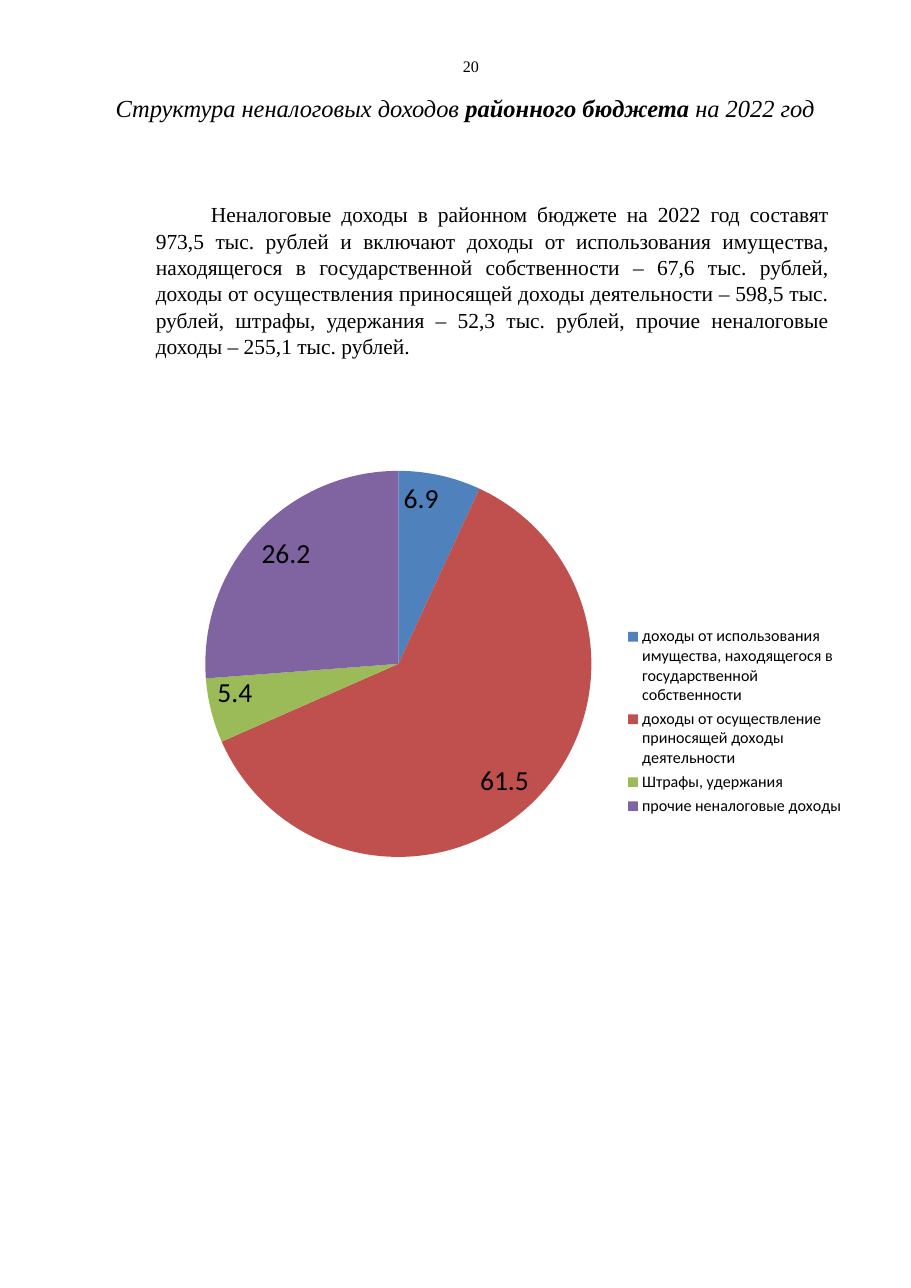
from lxml.etree import SubElement
from pptx import Presentation
from pptx.chart.data import CategoryChartData
from pptx.dml.color import RGBColor
from pptx.enum.chart import XL_CHART_TYPE as ChartType
from pptx.enum.chart import XL_LABEL_POSITION as LabelPosition
from pptx.enum.chart import XL_LEGEND_POSITION as LegendPosition
from pptx.enum.text import MSO_ANCHOR as Anchor
from pptx.enum.text import MSO_AUTO_SIZE as AutoSize
from pptx.enum.text import PP_ALIGN as Align
from pptx.oxml.ns import qn
from pptx.util import Pt

EMU_PER_PX = 8298
SERIF = "Times New Roman"
BLACK = "000000"

TITLE_PARTS = [
    ("Структура неналоговых доходов ", False),
    ("районного бюджета ", True),
    ("на 2022 год", False),
]
SUMMARY = (
    "Неналоговые доходы в районном бюджете на 2022 год составят 973,5 тыс. рублей "
    "и включают доходы от использования имущества, находящегося в государственной "
    "собственности – 67,6 тыс. рублей, доходы от осуществления приносящей доходы "
    "деятельности – 598,5 тыс. рублей, штрафы, удержания – 52,3 тыс. рублей, "
    "прочие неналоговые доходы – 255,1 тыс. рублей."
)
INCOME_SHARES = [
    ("доходы от использования имущества, находящегося в государственной собственности",
     6.9, "4F81BD"),
    ("доходы от осуществление приносящей доходы деятельности", 61.5, "C0504D"),
    ("Штрафы, удержания", 5.4, "9BBB59"),
    ("прочие неналоговые доходы", 26.2, "8064A2"),
]
PLOT_LAYOUT = {"x": 0.09, "y": 0, "w": 0.54, "h": 0.83}


def px(length):
    return length * EMU_PER_PX


def box(*lengths):
    return [px(length) for length in lengths]


def color(value):
    return RGBColor.from_string(value)


def style_font(font, size, name=SERIF):
    font.size = Pt(size)
    font.name = name
    font.color.rgb = color(BLACK)


def remove_insets(frame):
    frame.margin_left = frame.margin_right = 0
    frame.margin_top = frame.margin_bottom = 0


def add_page_number(slide):
    frame = slide.shapes.add_textbox(*box(463, 56, 20, 17)).text_frame
    remove_insets(frame)
    frame.word_wrap = False
    number = frame.paragraphs[0]
    number.text = "20"
    style_font(number.font, 10.5)


def fill_title(slide):
    title = slide.shapes.title
    title.left, title.top, title.width, title.height = box(91, 97, 748, 40)
    frame = title.text_frame
    remove_insets(frame)
    frame.word_wrap = True
    frame.auto_size = AutoSize.NONE
    frame.vertical_anchor = Anchor.TOP
    heading = frame.paragraphs[0]
    heading.alignment = Align.CENTER
    heading.line_spacing = Pt(16.3)
    style_font(heading.font, 16)
    heading.font.italic = True
    for text, bold in TITLE_PARTS:
        run = heading.add_run()
        run.text = text
        run.font.bold = bold


def add_summary(slide):
    frame = slide.shapes.add_textbox(*box(145, 195, 695, 168)).text_frame
    frame.word_wrap = True
    paragraph = frame.paragraphs[0]
    paragraph.text = SUMMARY
    paragraph.alignment = Align.JUSTIFY
    paragraph.line_spacing = Pt(17.3)
    paragraph.space_before = Pt(6.3)
    style_font(paragraph.font, 14)
    properties = paragraph._p.get_or_add_pPr()
    properties.set("marL", "0")
    properties.set("indent", str(px(55)))


def set_plot_layout(chart):
    plot_area = chart._chartSpace.chart.plotArea
    for default_layout in plot_area.findall(qn("c:layout")):
        plot_area.remove(default_layout)
    layout = SubElement(plot_area, qn("c:layout"))
    plot_area.insert(0, layout)
    manual = SubElement(layout, qn("c:manualLayout"))
    SubElement(manual, qn("c:layoutTarget")).set("val", "inner")
    for side in "xy":
        SubElement(manual, qn(f"c:{side}Mode")).set("val", "edge")
    for side, share in PLOT_LAYOUT.items():
        SubElement(manual, qn(f"c:{side}")).set("val", str(share))


def add_income_pie(slide):
    categories, shares, colors = zip(*INCOME_SHARES)
    data = CategoryChartData()
    data.categories = categories
    data.add_series("Series 1", shares)
    chart = slide.shapes.add_chart(ChartType.PIE, *box(141, 383, 715, 677), data).chart
    chart.has_title = False
    style_font(chart.font, 18, "Calibri")
    chart.has_legend = True
    legend = chart.legend
    legend.position = LegendPosition.RIGHT
    legend.include_in_layout = False
    style_font(legend.font, 10.5, "Calibri")
    plot = chart.plots[0]
    plot.vary_by_categories = True
    plot.has_data_labels = True
    labels = plot.data_labels
    labels.show_value = True
    labels.show_percentage = False
    labels.number_format = "0.0"
    labels.number_format_is_linked = False
    labels.position = LabelPosition.INSIDE_END
    style_font(labels.font, 18, "Calibri")
    for index, share_color in enumerate(colors):
        fill = plot.series[0].points[index].format.fill
        fill.solid()
        fill.fore_color.rgb = color(share_color)
    set_plot_layout(chart)


def main():
    presentation = Presentation()
    presentation.slide_width, presentation.slide_height = box(911, 1288)
    slide = presentation.slides.add_slide(presentation.slide_layouts[5])
    add_page_number(slide)
    fill_title(slide)
    add_income_pie(slide)
    add_summary(slide)
    presentation.save("out.pptx")


if __name__ == "__main__":
    main()
